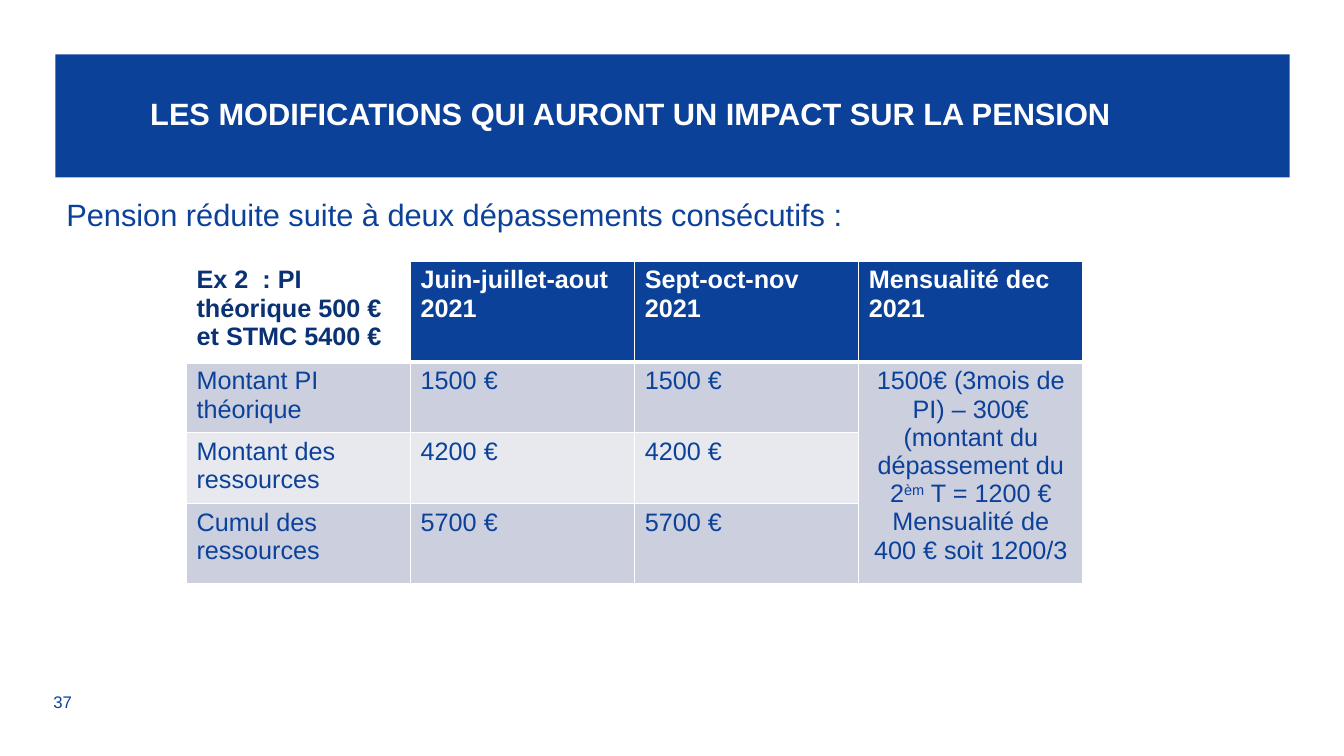
from lxml import etree
from pptx import Presentation
from pptx.dml.color import RGBColor
from pptx.enum import text
from pptx.oxml.ns import qn
from pptx.util import Inches, Pt

BLUE, NAVY, WHITE = "0C419A", "093174", "FFFFFF"
BANDS = ["CCCFDE", "E7E9EF"]
HEADERS = ["Ex 2  : PI théorique 500 € et STMC 5400 €", "Juin-juillet-aout 2021",
           "Sept-oct-nov 2021", "Mensualité dec 2021"]
ROWS = [["Montant PI théorique", "1500 €", "1500 €"],
        ["Montant des ressources", "4200 €", "4200 €"],
        ["Cumul des ressources", "5700 €", "5700 €"]]
MONTHLY_PAYMENT = ["1500€ (3mois de PI) – 300€ (montant du dépassement du 2", "èm",
                   " T = 1200 € Mensualité de 400 € soit 1200/3"]
ROW_HEIGHTS = [0.94, 0.66, 0.66, 0.74]


def rgb(value):
    return RGBColor.from_string(value)


def fill_solid(target, color):
    target.fill.solid()
    target.fill.fore_color.rgb = rgb(color)


def format_runs(paragraph, size, color, bold=False):
    for run in paragraph.runs:
        run.font.name = "Arial"
        run.font.size = Pt(size)
        run.font.bold = bold
        run.font.color.rgb = rgb(color)


def add_title(slide, left, top, width, height):
    title = slide.shapes.title
    title.left, title.top = Inches(left), Inches(top)
    title.width, title.height = Inches(width), Inches(height)
    fill_solid(title, BLUE)
    frame = title.text_frame
    frame.text = "LES MODIFICATIONS QUI AURONT UN IMPACT SUR LA PENSION"
    frame.auto_size = text.MSO_AUTO_SIZE.NONE
    frame.vertical_anchor = text.MSO_ANCHOR.MIDDLE
    frame.margin_left = Inches(0.94)
    frame.margin_top = frame.margin_right = frame.margin_bottom = Inches(0.08)
    paragraph = frame.paragraphs[0]
    paragraph.alignment = text.PP_ALIGN.LEFT
    paragraph.line_spacing = 0.9
    format_runs(paragraph, 22, WHITE, bold=True)


def add_text(slide, left, top, width, height, wording, size,
             anchor=text.MSO_ANCHOR.TOP, line_spacing=1.0):
    box = slide.shapes.add_textbox(Inches(left), Inches(top), Inches(width), Inches(height))
    frame = box.text_frame
    frame.word_wrap = True
    frame.vertical_anchor = anchor
    frame.text = wording
    frame.paragraphs[0].line_spacing = line_spacing
    format_runs(frame.paragraphs[0], size, BLUE)


def set_borders(cell, top=1, bottom=1):
    """Draw white borders; top and bottom widths are in points."""
    properties = cell._tc.get_or_add_tcPr()
    for side, width in (("L", 1), ("R", 1), ("T", top), ("B", bottom)):
        line = etree.SubElement(properties, qn(f"a:ln{side}"), w=str(Pt(width)))
        solid = etree.SubElement(line, qn("a:solidFill"))
        etree.SubElement(solid, qn("a:srgbClr"), val=WHITE)


def add_monthly_payment(cell):
    paragraph = cell.text_frame.paragraphs[0]
    paragraph.alignment = text.PP_ALIGN.CENTER
    for part in MONTHLY_PAYMENT:
        paragraph.add_run().text = part
    format_runs(paragraph, 18, BLUE)
    paragraph.runs[1]._r.get_or_add_rPr().set("baseline", "30000")


def add_pension_table(slide, left, top, width):
    frame = slide.shapes.add_table(len(ROW_HEIGHTS), len(HEADERS), Inches(left), Inches(top),
                                   Inches(width), Inches(sum(ROW_HEIGHTS)))
    table = frame.table
    for row, height in zip(table.rows, ROW_HEIGHTS):
        row.height = Inches(height)
    for r, row in enumerate(table.rows):
        for c, cell in enumerate(row.cells):
            set_borders(cell, top=3 if r == 1 else 1, bottom=3 if r == 0 else 1)
            if r == 0:
                fill_solid(cell, BLUE if c else WHITE)
                cell.text = HEADERS[c]
                format_runs(cell.text_frame.paragraphs[0], 18, WHITE if c else NAVY, bold=True)
                continue
            last_column = c == len(HEADERS) - 1
            fill_solid(cell, BANDS[0] if last_column else BANDS[(r - 1) % 2])
            if not last_column:
                cell.text = ROWS[r - 1][c]
                format_runs(cell.text_frame.paragraphs[0], 18, BLUE)
    payment_cell = table.cell(1, 3)
    payment_cell.merge(table.cell(3, 3))
    add_monthly_payment(payment_cell)


def main():
    presentation = Presentation()
    presentation.slide_width, presentation.slide_height = Inches(13.33), Inches(7.5)
    slide = presentation.slides.add_slide(presentation.slide_layouts[5])
    add_title(slide, 0.55, 0.54, 12.24, 1.22)
    add_text(slide, 0.56, 1.86, 12.24, 0.6,
             "Pension réduite suite à deux dépassements consécutifs :", 22, line_spacing=1.1)
    add_pension_table(slide, 1.85, 2.59, 8.89)
    add_text(slide, 0.43, 6.81, 0.79, 0.31, "37", 12, anchor=text.MSO_ANCHOR.MIDDLE)
    presentation.save("out.pptx")


if __name__ == "__main__":
    main()
